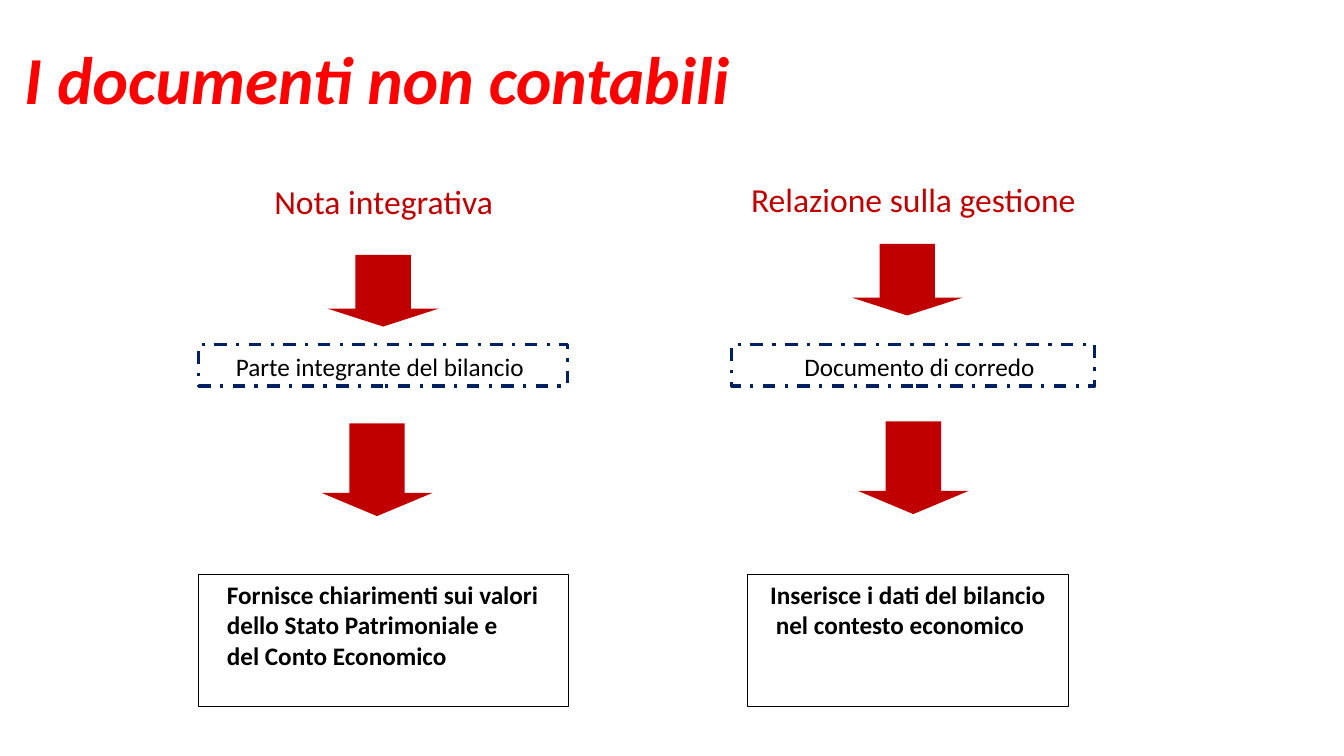
"""Build the slide on the two non-accounting documents of the annual report."""
from dataclasses import dataclass, field

from pptx import Presentation
from pptx.dml.color import RGBColor
from pptx.enum.dml import MSO_LINE
from pptx.enum.shapes import MSO_SHAPE
from pptx.enum.text import MSO_ANCHOR, PP_ALIGN
from pptx.shapes.autoshape import Shape
from pptx.slide import Slide
from pptx.util import Inches, Pt

WIDTH, HEIGHT = Inches(13.33), Inches(7.5)
RED = RGBColor(0xFF, 0x00, 0x00)
CRIMSON = RGBColor(0xC0, 0x00, 0x00)
NAVY = RGBColor(0x00, 0x20, 0x60)
BLACK = RGBColor(0x00, 0x00, 0x00)


@dataclass(frozen=True)
class Area:
    """A place on the slide, in percent of its width and height."""
    left: float
    top: float
    width: float
    height: float

    def emu(self) -> tuple[int, int, int, int]:
        return (across(self.left), down(self.top),
                across(self.width), down(self.height))


@dataclass(frozen=True)
class Style:
    """The look shared by texts of one level."""
    size: int
    color: RGBColor
    anchor: MSO_ANCHOR = MSO_ANCHOR.MIDDLE
    font: dict = field(default_factory=dict)
    paragraph: dict = field(default_factory=dict)
    border: dict | None = None
    border_color: RGBColor = BLACK


@dataclass(frozen=True)
class Label:
    """Lines of text in an area, with a left inset in percent of the width."""
    area: Area
    style: Style
    lines: tuple[str, ...]
    inset: float = 0.75


TITLE = Style(48, RED, font={"bold": True, "italic": True},
              paragraph={"line_spacing": 0.9})
DOCUMENT = Style(24, CRIMSON)
CENTERED_DOCUMENT = Style(24, CRIMSON, paragraph={"alignment": PP_ALIGN.CENTER})
ROLE = Style(18, BLACK, MSO_ANCHOR.BOTTOM, border_color=NAVY,
             border={"width": Pt(2.25), "dash_style": MSO_LINE.DASH_DOT})
PURPOSE = Style(18, BLACK, MSO_ANCHOR.TOP, font={"bold": True},
                border={"width": Pt(0.75)})

LABELS = (
    Label(Area(1.05, 1.33, 86.25, 19.33), TITLE, ("I documenti non contabili",)),
    Label(Area(14.78, 18.27, 27.53, 16.67), CENTERED_DOCUMENT, ("Nota integrativa",)),
    Label(Area(55.13, 17.47, 25.65, 17.73), DOCUMENT, ("Relazione sulla gestione",)),
    Label(Area(14.78, 45.6, 27.45, 5.47), ROLE, ("Parte integrante del bilancio",), 2.78),
    Label(Area(54.45, 45.6, 27, 5.47), ROLE, ("Documento di corredo",), 5.4),
    Label(Area(55.65, 76, 23.85, 17.47), PURPOSE,
          ("Inserisce i dati del bilancio", " nel contesto economico"), 1.65),
    Label(Area(14.78, 76, 27.53, 17.47), PURPOSE,
          ("Fornisce chiarimenti sui valori", "dello Stato Patrimoniale e",
           "del Conto Economico"), 2.1),
)
ARROW_WIDTH, SHORT_ARROW, LONG_ARROW = 8.25, 9.47, 12.27
ARROWS = (
    Area(24.38, 33.73, ARROW_WIDTH, SHORT_ARROW),
    Area(23.93, 56, ARROW_WIDTH, LONG_ARROW),
    Area(63.38, 32.27, ARROW_WIDTH, SHORT_ARROW),
    Area(63.83, 55.73, ARROW_WIDTH, LONG_ARROW),
)


def across(percent: float) -> int:
    return round(WIDTH * percent / 100)


def down(percent: float) -> int:
    return round(HEIGHT * percent / 100)


def apply(target: object, values: dict) -> None:
    for name, value in values.items():
        setattr(target, name, value)


def add_frame(slide: Slide, label: Label) -> Shape:
    style = label.style
    if style.border is None:
        return slide.shapes.add_textbox(*label.area.emu())
    frame = slide.shapes.add_shape(MSO_SHAPE.RECTANGLE, *label.area.emu())
    frame.shadow.inherit = False
    frame.fill.background()
    frame.line.color.rgb = style.border_color
    apply(frame.line, style.border)
    return frame


def draw_label(slide: Slide, label: Label) -> None:
    style = label.style
    text = add_frame(slide, label).text_frame
    apply(text, {"word_wrap": True, "vertical_anchor": style.anchor,
                 "margin_left": across(label.inset), "margin_right": 0})
    if style.paragraph.get("alignment") == PP_ALIGN.CENTER:
        text.margin_right = text.margin_left
    for number, line in enumerate(label.lines):
        paragraph = text.add_paragraph() if number else text.paragraphs[0]
        apply(paragraph, {"alignment": PP_ALIGN.LEFT} | style.paragraph)
        run = paragraph.add_run()
        run.text = line
        apply(run.font, {"name": "Calibri", "size": Pt(style.size)} | style.font)
        run.font.color.rgb = style.color


def draw_arrow(slide: Slide, area: Area) -> None:
    arrow = slide.shapes.add_shape(MSO_SHAPE.DOWN_ARROW, *area.emu())
    arrow.shadow.inherit = False
    arrow.adjustments[0], arrow.adjustments[1] = 0.5, 0.25
    arrow.fill.solid()
    arrow.fill.fore_color.rgb = CRIMSON
    arrow.line.fill.background()


def main() -> None:
    deck = Presentation()
    apply(deck, {"slide_width": WIDTH, "slide_height": HEIGHT})
    slide = deck.slides.add_slide(deck.slide_layouts[6])
    for label in LABELS:
        draw_label(slide, label)
    for area in ARROWS:
        draw_arrow(slide, area)
    deck.save("out.pptx")


if __name__ == "__main__":
    main()
